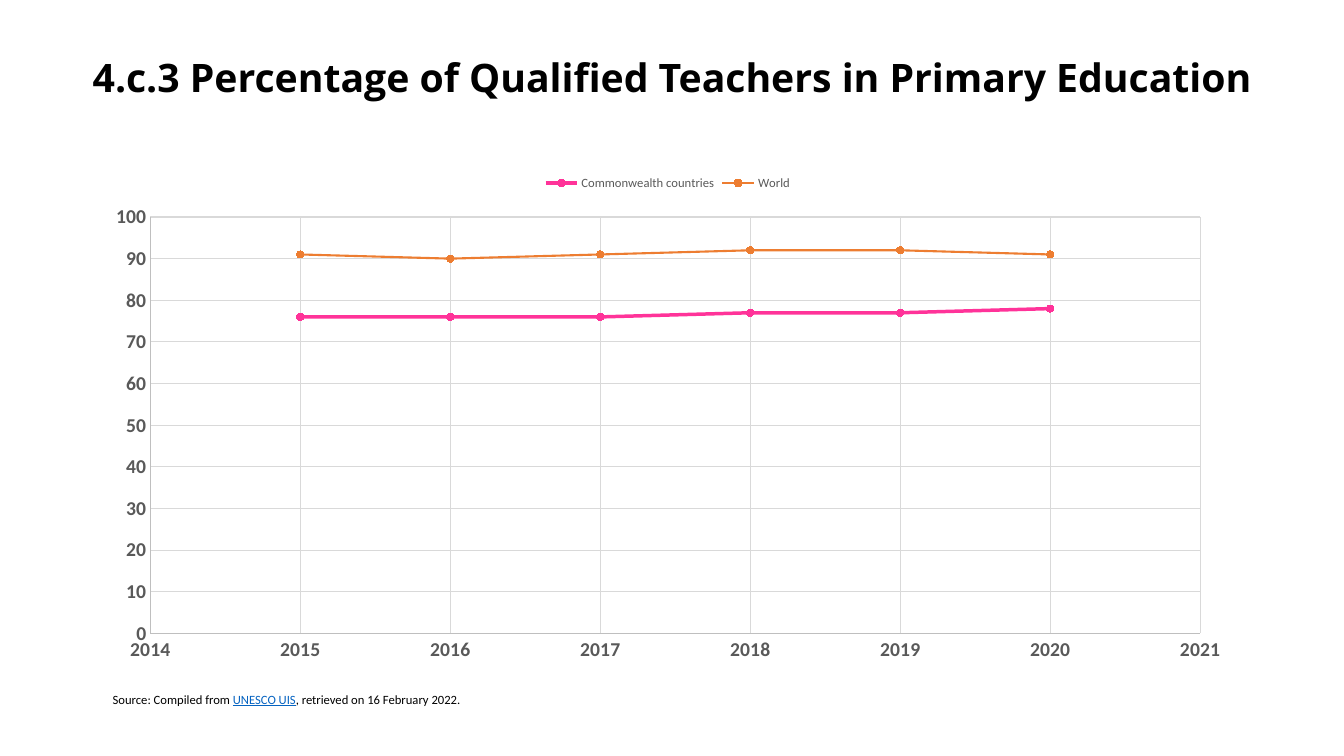
"""Build a slide charting qualified primary teachers, Commonwealth against world."""
import pptx
import pptx.chart.data
import pptx.dml.color
import pptx.enum.chart
import pptx.enum.text
import pptx.oxml
import pptx.oxml.ns
import pptx.util

Cm = pptx.util.Cm
Pt = pptx.util.Pt

COLORS = {
    "text": "000000",
    "link": "0563C1",
    "label": "595959",
    "axis": "BFBFBF",
    "grid": "D9D9D9",
    "commonwealth": "FF3399",
    "world": "ED7D31",
}


def rgb(name):
    return pptx.dml.color.RGBColor.from_string(COLORS[name])


def style_font(font, name, size, color, bold=False):
    font.name = name
    font.size = Pt(size)
    font.bold = bold
    font.color.rgb = rgb(color)


deck = pptx.Presentation()
deck.slide_width, deck.slide_height = Cm(33.87), Cm(19.05)
page = deck.slides.add_slide(deck.slide_layouts[6])

title_box = page.shapes.add_textbox(Cm(0), Cm(1.02), Cm(33.87), Cm(1.96))
title_box.text_frame.word_wrap = True
title_box.text_frame.vertical_anchor = pptx.enum.text.MSO_ANCHOR.MIDDLE
para = title_box.text_frame.paragraphs[0]
para.text = "4.c.3 Percentage of Qualified Teachers in Primary Education"
para.alignment = pptx.enum.text.PP_ALIGN.CENTER
para.line_spacing = 0.9
style_font(para.font, "Open Sans", 28, "text", True)

source_box = page.shapes.add_textbox(Cm(2.59), Cm(17.3), Cm(24.97), Cm(0.64))
source_box.text_frame.word_wrap = True
para = source_box.text_frame.paragraphs[0]
for text, color in [
    ("Source: Compiled from ", "text"),
    ("UNESCO UIS", "link"),
    (", retrieved on 16 February 2022.", "text"),
]:
    span = para.add_run()
    span.text = text
    style_font(span.font, "Calibri", 9, color)
    span.font.underline = color == "link"

series_rows = [
    ("Commonwealth countries", "commonwealth", 2.5, [76, 76, 76, 77, 77, 78]),
    ("World", "world", 1.5, [91, 90, 91, 92, 92, 91]),
]
data = pptx.chart.data.XyChartData()
for name, color, width, values in series_rows:
    points = data.add_series(name)
    for year, value in enumerate(values, 2015):
        points.add_data_point(year, value)

chart = page.shapes.add_chart(
    pptx.enum.chart.XL_CHART_TYPE.XY_SCATTER_LINES,
    Cm(2.34), Cm(4.14), Cm(28.98), Cm(12.78), data,
).chart
chart.has_title = False
style_font(chart.font, "Calibri", 10, "text")
chart.has_legend = True
chart.legend.position = pptx.enum.chart.XL_LEGEND_POSITION.TOP
chart.legend.include_in_layout = False
style_font(chart.legend.font, "Calibri", 9, "label")

for axis, low, high, step, number_format in [
    (chart.category_axis, 2014, 2021, 1, "General"),
    (chart.value_axis, 0, 100, 10, "#,##0"),
]:
    axis.minimum_scale, axis.maximum_scale, axis.major_unit = low, high, step
    axis.major_tick_mark = pptx.enum.chart.XL_TICK_MARK.NONE
    axis.minor_tick_mark = pptx.enum.chart.XL_TICK_MARK.NONE
    axis.tick_labels.number_format = number_format
    axis.tick_labels.number_format_is_linked = False
    style_font(axis.tick_labels.font, "Calibri", 14, "label", True)
    axis.has_major_gridlines = True
    for line, color in [
        (axis.format.line, "axis"),
        (axis.major_gridlines.format.line, "grid"),
    ]:
        line.color.rgb = rgb(color)
        line.width = Pt(0.75)

plot = chart.plots[0]
plot.vary_by_categories = False
for series, (name, color, width, values) in zip(plot.series, series_rows):
    series.smooth = False
    series.format.line.color.rgb = rgb(color)
    series.format.line.width = Pt(width)
    series.marker.style = pptx.enum.chart.XL_MARKER_STYLE.CIRCLE
    series.marker.size = 5
    series.marker.format.fill.solid()
    series.marker.format.fill.fore_color.rgb = rgb(color)
    series.marker.format.line.color.rgb = rgb(color)

plot_area = chart.element.find(".//" + pptx.oxml.ns.qn("c:plotArea"))
for layout in plot_area.findall(pptx.oxml.ns.qn("c:layout")):
    plot_area.remove(layout)
plot_area.insert(0, pptx.oxml.parse_xml(
    f'<c:layout {pptx.oxml.ns.nsdecls("c")}><c:manualLayout>'
    '<c:layoutTarget val="inner"/><c:xMode val="edge"/><c:yMode val="edge"/>'
    '<c:x val="0.05"/><c:y val="0.104"/><c:w val="0.913"/><c:h val="0.821"/>'
    '</c:manualLayout></c:layout>'
))

deck.save("out.pptx")
